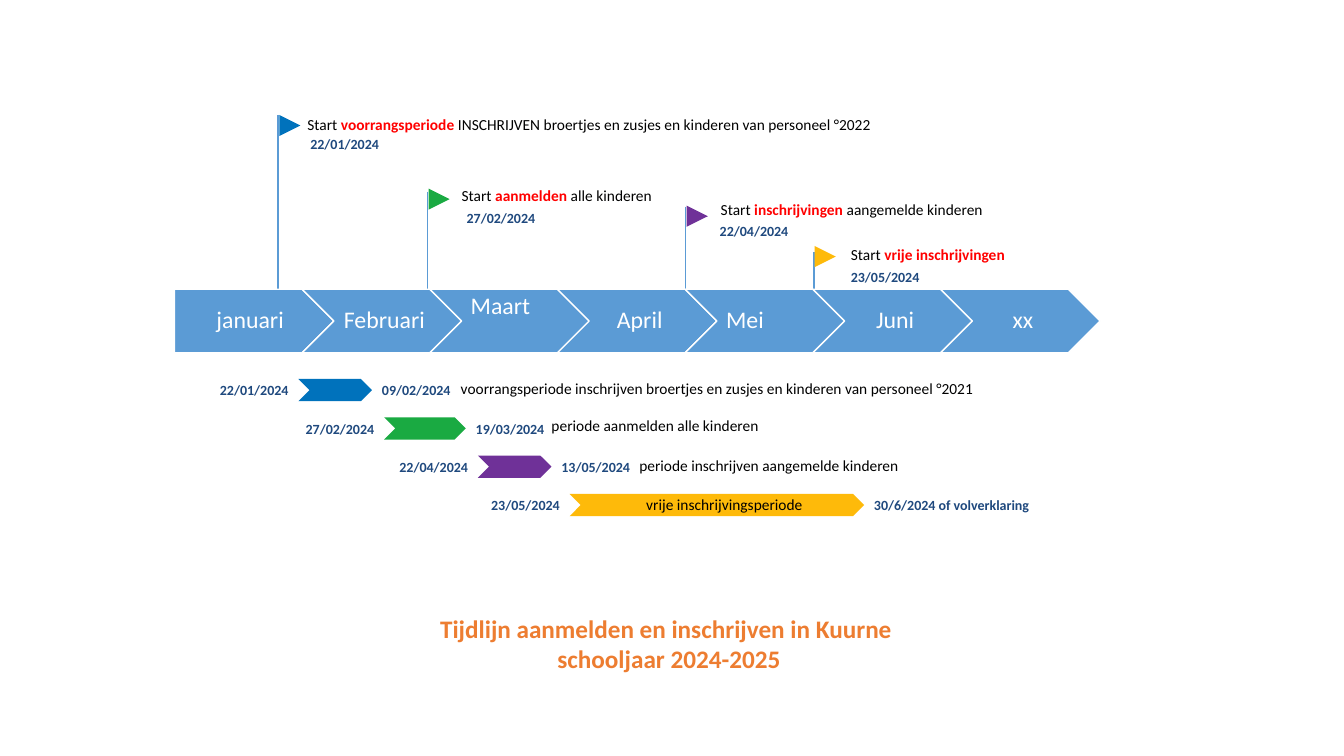
from lxml import etree
from pptx import Presentation
from pptx.dml.color import RGBColor
from pptx.enum.shapes import MSO_CONNECTOR, MSO_SHAPE
from pptx.enum.text import MSO_ANCHOR, PP_ALIGN
from pptx.oxml.ns import qn
from pptx.util import Inches, Pt

LEFT, CENTER, RIGHT = PP_ALIGN.LEFT, PP_ALIGN.CENTER, PP_ALIGN.RIGHT
TOP, MIDDLE = MSO_ANCHOR.TOP, MSO_ANCHOR.MIDDLE
CHEVRON, PLATE = MSO_SHAPE.CHEVRON, MSO_SHAPE.PENTAGON
MERGE, LINE = MSO_SHAPE.FLOWCHART_MERGE, MSO_CONNECTOR.STRAIGHT

FONT = "Calibri"
BLACK, WHITE, RED, NAVY = "000001", "FFFFFF", "FF0000", "1F497E"
SKY, ORANGE = "5B9BD5", "ED7D31"
BLUE, GREEN, PURPLE, YELLOW = "0072BC", "1AAA42", "6F3198", "FEBA0A"
PAD = (0.1, 0.05, 0.1, 0.05)

MONTHS = [
    ("januari", CENTER, MIDDLE),
    ("Februari", CENTER, MIDDLE),
    ("Maart", LEFT, TOP),
    ("April", CENTER, MIDDLE),
    ("Mei", LEFT, MIDDLE),
    ("Juni", CENTER, MIDDLE),
    ("xx", CENTER, MIDDLE),
]
FLAGS = [
    (BLUE, (2.76, 1.14), 1.14, (2.95, 1.13, 7.1), (2.98, 1.34), "22/01/2024",
     "voorrangsperiode", " INSCHRIJVEN broertjes en zusjes en kinderen van personeel °2022"),
    (GREEN, (4.24, 1.9), 1.87, (4.48, 1.83, 2.15), (4.53, 2.08), "27/02/2024",
     "aanmelden", " alle kinderen"),
    (PURPLE, (6.8, 2.05), 2.04, (7.05, 1.97, 3.2), (7.04, 2.21), "22/04/2024",
     "inschrijvingen", " aangemelde kinderen"),
    (YELLOW, (8.07, 2.5), 2.44, (8.34, 2.42, 3.25), (8.34, 2.66), "23/05/2024",
     "vrije inschrijvingen", ""),
]
BARS = [
    (BLUE, 2.96, 0.73, "22/01/2024", "09/02/2024", (4.57, 3.79, 5.13),
     "voorrangsperiode inschrijven broertjes en zusjes en kinderen van personeel °2021"),
    (GREEN, 3.81, 0.81, "27/02/2024", "19/03/2024", (5.47, 4.16, 2.07),
     "periode aanmelden alle kinderen"),
    (PURPLE, 4.74, 0.73, "22/04/2024", "13/05/2024", (6.34, 4.56, 2.59),
     "periode inschrijven aangemelde kinderen"),
    (YELLOW, 5.65, 2.92, "23/05/2024", "30/6/2024 of volverklaring", (6.41, 4.94, 1.56),
     "vrije inschrijvingsperiode"),
]


def color(code):
    """Turn a hex string into a colour."""
    return RGBColor.from_string(code)


def shape(slide, kind, box, fill, edge=None):
    """Add a filled preset shape, with an outline if an edge colour is given."""
    item = slide.shapes.add_shape(kind, *map(Inches, box))
    item.shadow.inherit = False
    item.fill.solid()
    item.fill.fore_color.rgb = color(fill)
    if edge:
        item.line.color.rgb = color(edge)
        item.line.width = Pt(1)
    else:
        item.line.fill.background()
    return item


def text(slide, box, lines, size, tone, bold=False, align=LEFT, anchor=TOP,
         pad=PAD, wrap=False, space=None):
    """Add a text box; each line is a list of (words, tone, bold) or a string."""
    frame = slide.shapes.add_textbox(*map(Inches, box)).text_frame
    frame.word_wrap = wrap
    frame.vertical_anchor = anchor
    frame.margin_left, frame.margin_top, frame.margin_right, frame.margin_bottom = map(Inches, pad)
    for i, line in enumerate(lines):
        para = frame.add_paragraph() if i else frame.paragraphs[0]
        para.alignment = align
        if space:
            para.line_spacing = space
        font = para.font
        font.name, font.size = FONT, Pt(size)
        font.bold, font.color.rgb = bold, color(tone)
        if isinstance(line, str):
            para.add_run().text = line
            continue
        for words, shade, heavy in line:
            run = para.add_run()
            run.text = words
            run.font.bold, run.font.color.rgb = heavy, color(shade)


def pole(slide, x, top, base):
    """Draw an upright flag pole."""
    line = slide.shapes.add_connector(LINE, *map(Inches, (x, top, x, base)))
    line.line.color.rgb = color(SKY)
    line.line.width = Pt(1.25)
    etree.SubElement(line._element.spPr, qn("a:effectLst"))


def flag(slide, base, fill, foot, top, place, spot, date, key, rest):
    """Plant one flag on the band with its caption and date."""
    x, head = foot
    pole(slide, x, head, base)
    shape(slide, MERGE, (x + 0.01, top, 0.21, 0.21), fill).rotation = 270
    runs = [("Start ", BLACK, False), (key, RED, True)]
    if rest:
        runs.append((rest, BLACK, False))
    text(slide, (*place, 0.25), [runs], 11, BLACK, wrap=True, space=0.8)
    text(slide, (*spot, 1.53, 0.25), [date], 10, NAVY, True, pad=(0.1, 0, 0.1, 0.05))


def band(slide, x, y, width, height):
    """Draw the row of month arrows across the box."""
    tip = height / 2
    step = (width - tip) / len(MONTHS)
    for i, (name, align, anchor) in enumerate(MONTHS):
        left = x + i * step
        shape(slide, CHEVRON if i else PLATE, (left, y, step + tip, height), SKY, WHITE)
        if i:
            box, inset = (left + tip, y, step - tip, height), 0.07
        else:
            box, inset = (left, y, step + tip / 2, height), 0.1
        if align == LEFT:
            inset = 0.09
        text(slide, box, [name], 17, WHITE, align=align, anchor=anchor,
             pad=(inset, 0.05, 0.02, 0.05), wrap=True, space=0.9)


def bars(slide, y, height, pitch):
    """Draw the periods as stepped bars with their dates and labels."""
    for i, (fill, x, width, start, end, place, label) in enumerate(BARS):
        top = y + i * pitch
        shape(slide, CHEVRON, (x, top, width, height), fill)
        text(slide, (x - 1, top - 0.02, 1, 0.27), [start], 10, NAVY, True, RIGHT)
        reach = 2 if len(end) > len(start) else 1
        text(slide, (x + width, top - 0.02, reach, 0.27), [end], 10, NAVY, True)
        text(slide, (*place, 0.16), [label], 11, BLACK, anchor=MIDDLE,
             pad=(0, 0, 0, 0), space=Pt(10.5))


def main():
    """Build the timeline slide and save it."""
    deck = Presentation()
    deck.slide_width, deck.slide_height = Inches(13.33), Inches(7.5)
    slide = deck.slides.add_slide(deck.slide_layouts[6])
    for item in FLAGS:
        flag(slide, 2.9, *item)
    band(slide, 1.73, 2.87, 9.18, 0.63)
    bars(slide, 3.76, 0.22, 0.38)
    text(slide, (2.96, 6.1, 7.35, 0.56),
         ["Tijdlijn aanmelden en inschrijven in Kuurne ", "schooljaar 2024-2025"],
         18, ORANGE, True, CENTER, MIDDLE)
    deck.save("out.pptx")


if __name__ == "__main__":
    main()
